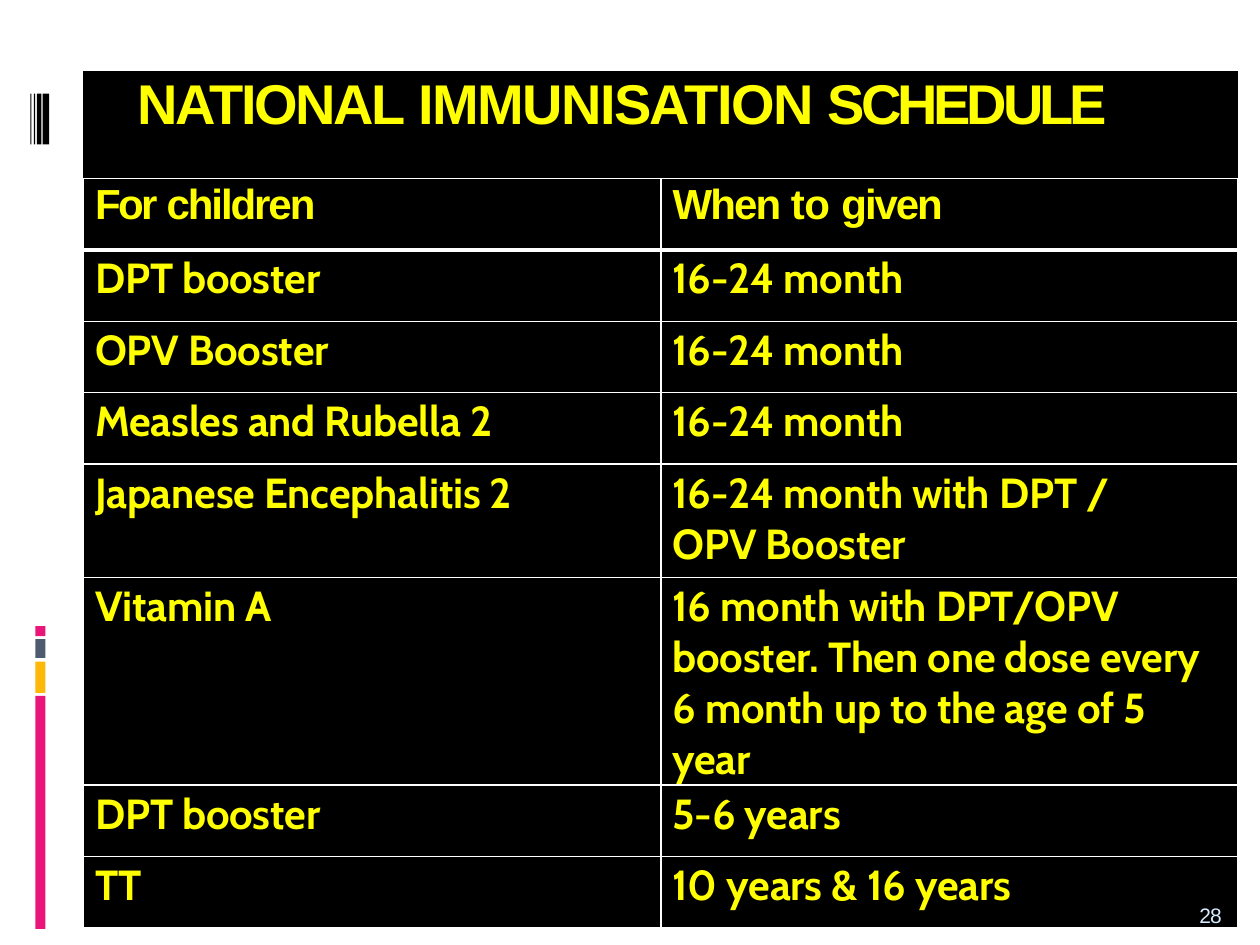
from lxml import etree
from pptx import Presentation
from pptx.dml.color import RGBColor
from pptx.enum.shapes import MSO_SHAPE
from pptx.oxml.ns import qn
from pptx.util import Pt

RECTANGLE = MSO_SHAPE.RECTANGLE

COLORS = {
    "cell": "000000",
    "border": "FFFFFF",
    "text": "FFFF00",
    "pink": "EA1579",
    "amber": "FDB809",
    "slate": "4E5B6E",
    "number": "D5EBFF",
}
HEADING_FONT = "Arial"
BODY_FONT = "Cabin"

TITLE = [("NATIONAL ", -1.4), ("IMMUNISATION ", -0.9), ("SCHEDULE", -2.4)]
HEADERS = [
    [("For ", -1.5), ("children", -1.2)],
    [("When ", -1.1), ("to ", -0.2), ("given", -1.2)],
]
SCHEDULE = [
    ("DPT booster", "16-24 month"),
    ("OPV Booster", "16-24 month"),
    ("Measles and Rubella 2", "16-24 month"),
    ("Japanese Encephalitis 2", "16-24 month with DPT /\vOPV Booster"),
    ("Vitamin A", "16 month with DPT/OPV booster. Then one dose every "
                  "6 month up to the age of 5 year"),
    ("DPT booster", "5-6 years"),
    ("TT", "10 years & 16 years"),
]
ROW_HEIGHT = 40.8
ROW_HEIGHTS = [61.6] + [ROW_HEIGHT] * 4 + [64.8, 118.5] + [ROW_HEIGHT] * 2


def color(name):
    return RGBColor.from_string(COLORS[name])


def format_run(run, font_name, size, color_name, spacing, bold=True):
    run.font.name = font_name
    run.font.size = Pt(size)
    run.font.bold = bold
    run.font.color.rgb = color(color_name)
    run._r.get_or_add_rPr().set("spc", str(round(spacing * 100)))


def add_block(slide, left, top, width, height, color_name):
    shape = slide.shapes.add_shape(RECTANGLE, Pt(left), Pt(top), Pt(width), Pt(height))
    shape.shadow.inherit = False
    shape.fill.solid()
    shape.fill.fore_color.rgb = color(color_name)
    shape.line.fill.background()


def add_barcode(slide, left, top, height):
    for offset, width in [(0, 0.7), (2.1, 0.7), (3.7, 2.7), (7.1, 3.7)]:
        add_block(slide, left + offset, top, width, height, "cell")


def add_color_rail(slide, left, top, width):
    for offset, height, color_name in [
        (0, 5.7, "pink"), (7.4, 10.8, "slate"),
        (20.2, 18, "amber"), (39.8, 133.2, "pink"),
    ]:
        add_block(slide, left, top + offset, width, height, color_name)


def set_borders(cell, widths):
    properties = cell._tc.get_or_add_tcPr()
    for side in "LRTB":
        line = etree.SubElement(properties, qn(f"a:ln{side}"))
        if side in widths:
            line.set("w", str(Pt(widths[side])))
            fill = etree.SubElement(line, qn("a:solidFill"))
            etree.SubElement(fill, qn("a:srgbClr")).set("val", COLORS["border"])
        else:
            line.set("w", "0")
            etree.SubElement(line, qn("a:noFill"))


def fill_cell(cell, runs, font_name, size, indent, borders):
    set_borders(cell, borders)
    cell.fill.solid()
    cell.fill.fore_color.rgb = color("cell")
    cell.margin_left, cell.margin_right = Pt(indent), Pt(14)
    cell.margin_top, cell.margin_bottom = Pt(2), 0
    paragraph = cell.text_frame.paragraphs[0]
    paragraph.text = "".join(text for text, _ in runs) if len(runs) == 1 else ""
    if len(runs) > 1:
        for text, _ in runs:
            paragraph.add_run().text = text
    spacings = [spacing for _, spacing in runs]
    for index, run in enumerate(paragraph.runs):
        spacing = spacings[min(index, len(spacings) - 1)]
        format_run(run, font_name, size, "text", spacing)


def add_schedule(slide, left, top, width):
    frame = slide.shapes.add_table(
        len(ROW_HEIGHTS), 2, Pt(left), Pt(top), Pt(width), Pt(sum(ROW_HEIGHTS)))
    table = frame.table
    table.first_row = table.horz_banding = False
    for column in table.columns:
        column.width = Pt(width / 2)
    for row, height in zip(table.rows, ROW_HEIGHTS):
        row.height = Pt(height)

    table.cell(0, 0).merge(table.cell(0, 1))
    fill_cell(table.cell(0, 0), TITLE, HEADING_FONT, 32, 31, {"B": 1})

    body = [[[(text, -0.1)] for text in texts] for texts in SCHEDULE]
    for row_index, row_runs in enumerate([HEADERS] + body, start=1):
        font_name = HEADING_FONT if row_index == 1 else BODY_FONT
        borders = {
            "L": 1,
            "R": 1,
            "T": 3 if row_index == 2 else 1,
            "B": 3 if row_index == 1 else 1,
        }
        for column_index, runs in enumerate(row_runs):
            cell = table.cell(row_index, column_index)
            fill_cell(cell, runs, font_name, 24, 6.8, borders)


def add_page_number(slide, left, top, width, height):
    text_frame = slide.shapes.add_textbox(
        Pt(left), Pt(top), Pt(width), Pt(height)).text_frame
    text_frame.word_wrap = True
    text_frame.margin_left = Pt(2.8)
    text_frame.margin_right = text_frame.margin_top = text_frame.margin_bottom = 0
    text_frame.text = "28"
    paragraph = text_frame.paragraphs[0]
    paragraph.line_spacing = Pt(12.3)
    format_run(paragraph.runs[0], HEADING_FONT, 12, "number", -0.5, bold=False)


def main():
    presentation = Presentation()
    presentation.slide_width, presentation.slide_height = Pt(720), Pt(540)
    slide = presentation.slides.add_slide(presentation.slide_layouts[6])
    add_color_rail(slide, left=20.2, top=357.8, width=5.8)
    add_barcode(slide, left=17.3, top=53.5, height=29)
    add_schedule(slide, left=47.6, top=40.4, width=660)
    add_page_number(slide, left=682.6, top=517.7, width=18.7, height=13.7)
    presentation.save("out.pptx")


if __name__ == "__main__":
    main()
